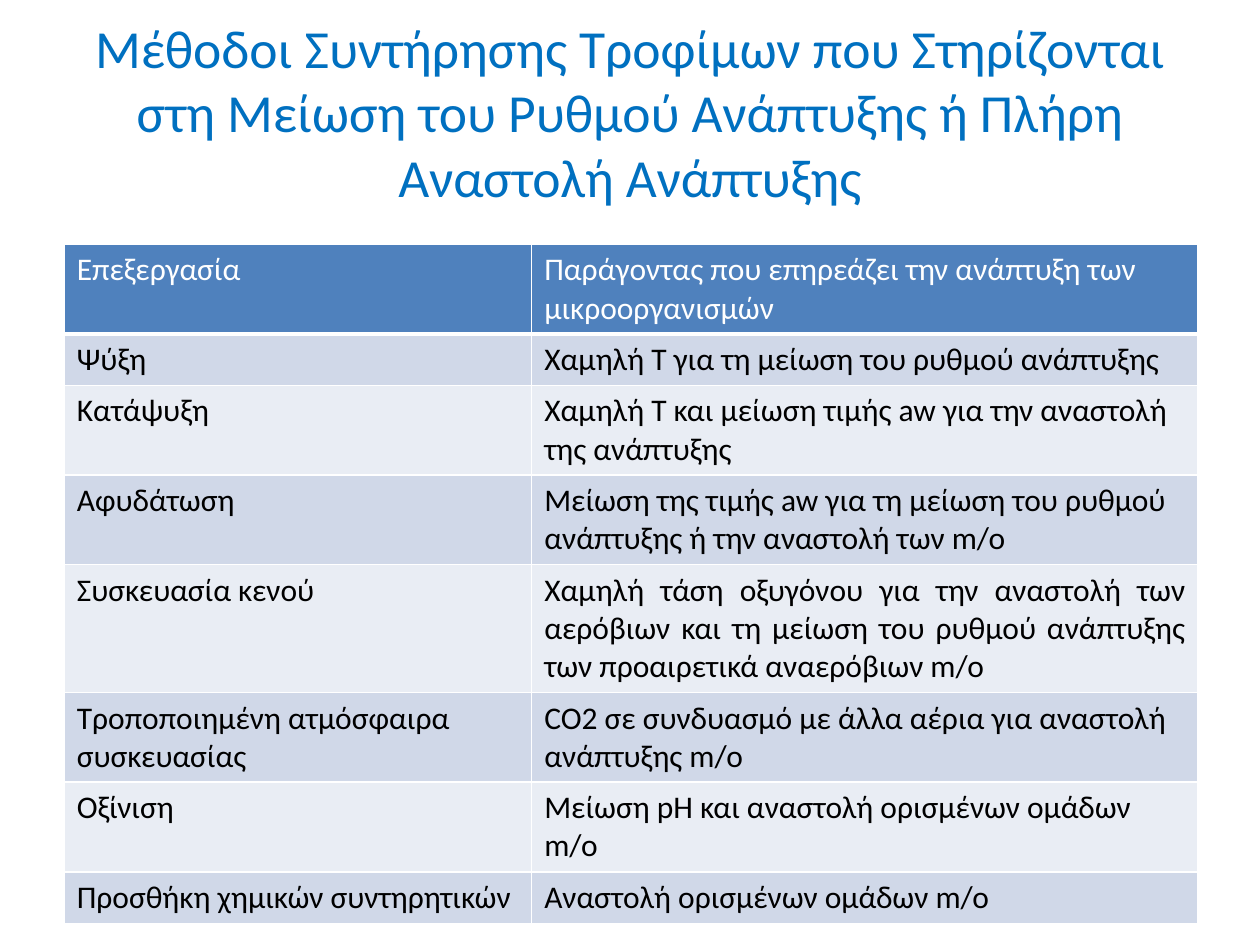
from lxml.etree import SubElement
from pptx import Presentation
from pptx.dml.color import RGBColor
from pptx.enum.text import MSO_ANCHOR as Anchor, PP_ALIGN as Align
from pptx.oxml.ns import qn
from pptx.util import Inches, Pt

TITLE = ("Μέθοδοι Συντήρησης Τροφίμων που Στηρίζονται στη Μείωση "
         "του Ρυθμού Ανάπτυξης ή Πλήρη Αναστολή Ανάπτυξης")
ROWS = [
    ("Επεξεργασία",
     "Παράγοντας που επηρεάζει την ανάπτυξη των μικροοργανισμών"),
    ("Ψύξη", "Χαμηλή Τ για τη μείωση του ρυθμού ανάπτυξης"),
    ("Κατάψυξη",
     "Χαμηλή Τ και μείωση τιμής aw για την αναστολή της ανάπτυξης"),
    ("Αφυδάτωση",
     "Μείωση της τιμής aw για τη μείωση του ρυθμού ανάπτυξης "
     "ή την αναστολή των m/o"),
    ("Συσκευασία κενού",
     "Χαμηλή τάση οξυγόνου για την αναστολή των αερόβιων και τη μείωση "
     "του ρυθμού ανάπτυξης των προαιρετικά αναερόβιων m/o"),
    ("Τροποποιημένη ατμόσφαιρα συσκευασίας",
     "CO2 σε συνδυασμό με άλλα αέρια για αναστολή ανάπτυξης m/o"),
    ("Οξίνιση", "Μείωση pH και αναστολή ορισμένων ομάδων m/o"),
    ("Προσθήκη χημικών συντηρητικών", "Αναστολή ορισμένων ομάδων m/o"),
]
JUSTIFIED = (4, 1)
WIDTHS = (3.71, 5.29)
ROW_HEIGHT = 0.41
HEAD, BANDS = "4F81BD", ("E9EDF4", "D0D8E8")


def paint(fill, color):
    fill.solid()
    fill.fore_color.rgb = RGBColor.from_string(color)


def write(frame, text, size=18, color="000000", align=Align.LEFT):
    para = frame.paragraphs[0]
    para.alignment = align
    run = para.add_run()
    run.text = text
    font = run.font
    font.name, font.size, font.bold = "Calibri", Pt(size), False
    paint(font.fill, color)


def edge(cell, bottom):
    """Give the cell white borders, with its own width at the bottom."""
    props = cell._tc.get_or_add_tcPr()
    for side, width in zip("LRTB", (1, 1, 1, bottom)):
        line = SubElement(props, qn("a:ln" + side), w=str(Pt(width)))
        fill = SubElement(line, qn("a:solidFill"))
        SubElement(fill, qn("a:srgbClr"), val="FFFFFF")


def main():
    prs = Presentation()
    prs.slide_width, prs.slide_height = Inches(10), Inches(7.5)
    slide = prs.slides.add_slide(prs.slide_layouts[5])

    title = slide.shapes.title
    title.left, title.top = Inches(0.5), Inches(0.3)
    title.width, title.height = Inches(9), Inches(1.17)
    title.text_frame.vertical_anchor = Anchor.MIDDLE
    write(title.text_frame, TITLE, size=30.6, color="0070C0",
          align=Align.CENTER)

    table = slide.shapes.add_table(
        len(ROWS), len(WIDTHS), Inches(0.51), Inches(1.94),
        Inches(sum(WIDTHS)), Inches(ROW_HEIGHT * len(ROWS))).table
    for col, width in zip(table.columns, WIDTHS):
        col.width = Inches(width)
    for r, row in enumerate(ROWS):
        table.rows[r].height = Inches(ROW_HEIGHT)
        for c, text in enumerate(row):
            cell = table.cell(r, c)
            edge(cell, bottom=1 if r else 3)
            paint(cell.fill, BANDS[r % 2] if r else HEAD)
            write(cell.text_frame, text,
                  color="000000" if r else "FFFFFF",
                  align=Align.JUSTIFY if (r, c) == JUSTIFIED else Align.LEFT)

    prs.save("out.pptx")


if __name__ == "__main__":
    main()
